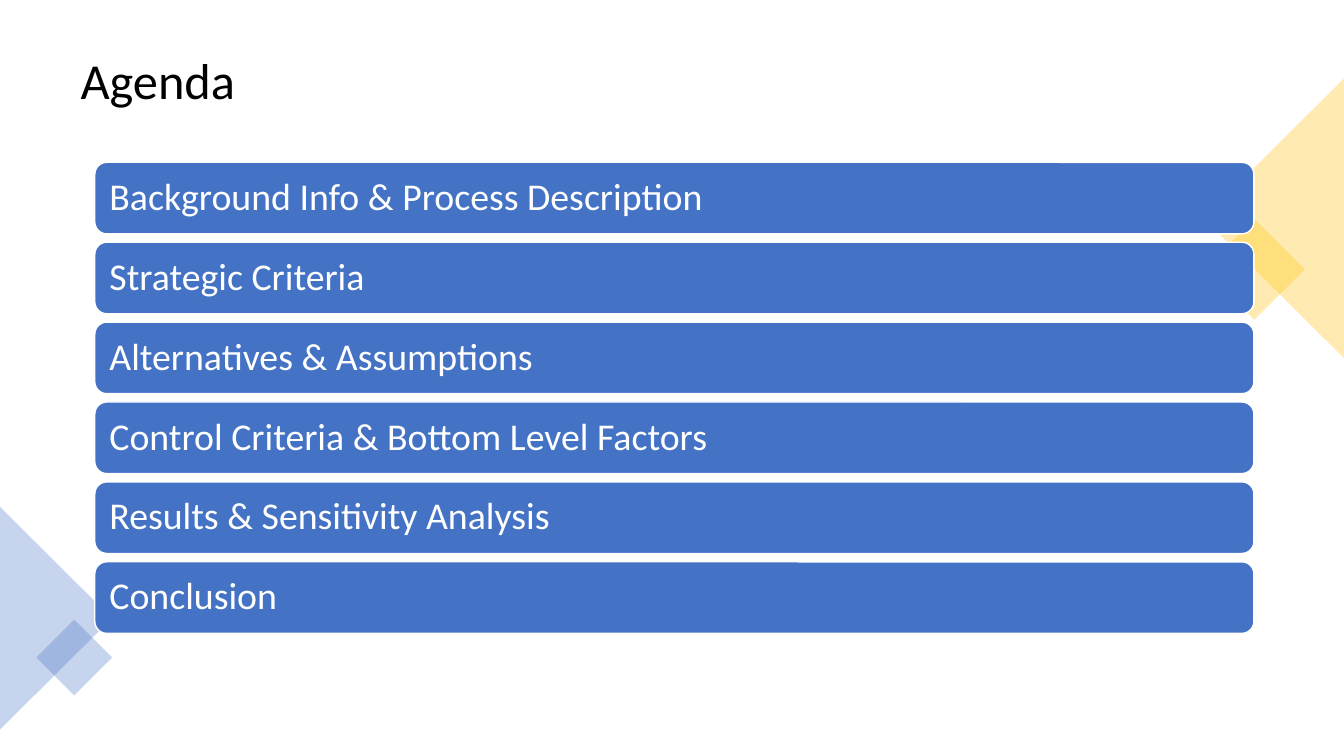
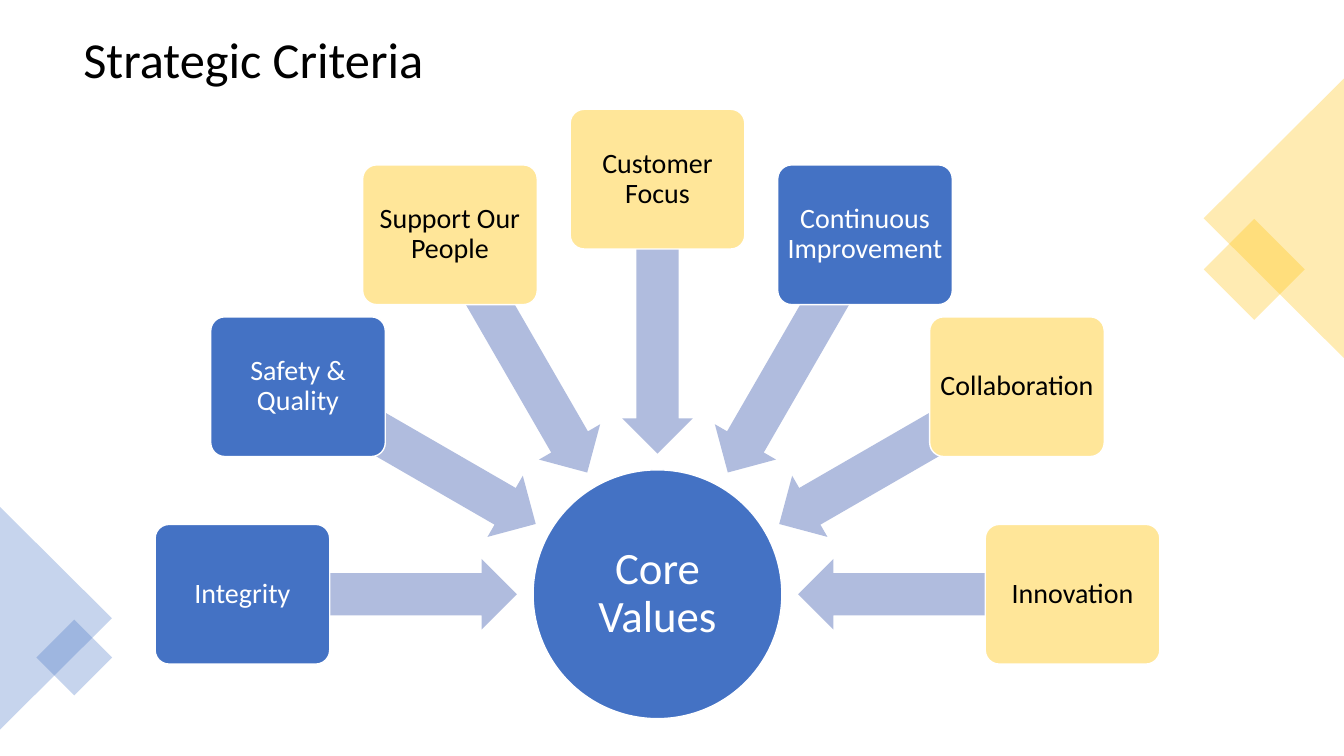
from math import cos, radians, sin

from lxml import etree
from pptx import Presentation
from pptx.dml.color import RGBColor
from pptx.enum.shapes import MSO_SHAPE
from pptx.enum.text import MSO_ANCHOR, PP_ALIGN
from pptx.oxml.ns import qn
from pptx.util import Cm, Pt

RECT = MSO_SHAPE.RECTANGLE
ROUNDED = MSO_SHAPE.ROUNDED_RECTANGLE
TRIANGLE = MSO_SHAPE.ISOSCELES_TRIANGLE
OVAL = MSO_SHAPE.OVAL
ARROW = MSO_SHAPE.LEFT_ARROW
LEFT, CENTER = PP_ALIGN.LEFT, PP_ALIGN.CENTER
MIDDLE = MSO_ANCHOR.MIDDLE

FONT = "Calibri"
COLORS = {
    "blue": "4472C4",
    "gold": "FFC000",
    "cream": "FFE699",
    "lavender": "B0BCDE",
    "white": "FFFFFF",
    "black": "000000",
}
SLIDE_SIZE = (33.87, 19.05)

# Kind, centre x, centre y, width, height, rotation, colour
CORNER_DIAMONDS = [
    (RECT, 31.61, 6.79, 1.8, 1.8, 45, "gold"),
    (TRIANGLE, 32.1, 5.5, 7.04, 3.53, 270, "gold"),
    (TRIANGLE, 1.41, 15.58, 5.61, 2.82, 90, "blue"),
    (RECT, 1.87, 16.57, 1.35, 1.35, 45, "blue"),
]
AGENDA = [
    "Background Info & Process Description",
    "Strategic Criteria",
    "Alternatives & Assumptions",
    "Control Criteria & Bottom Level Factors",
    "Results & Sensitivity Analysis",
    "Conclusion",
]
CORE_VALUES = [
    ("Integrity", "blue"),
    ("Safety & Quality", "blue"),
    ("Support Our People", "cream"),
    ("Customer Focus", "cream"),
    ("Continuous Improvement", "blue"),
    ("Collaboration", "cream"),
    ("Innovation", "cream"),
]


def rgb(name):
    return RGBColor.from_string(COLORS[name])


def write(shape, text, size, color="white", align=CENTER, inset=(0.1, 0.1)):
    """Set the text; inset is the horizontal and vertical margin in cm."""
    frame = shape.text_frame
    frame.word_wrap = True
    frame.vertical_anchor = MIDDLE
    frame.margin_left = frame.margin_right = Cm(inset[0])
    frame.margin_top = frame.margin_bottom = Cm(inset[1])
    paragraph = frame.paragraphs[0]
    paragraph.text = text
    paragraph.alignment = align
    paragraph.line_spacing = 0.9
    paragraph.font.name = FONT
    paragraph.font.size = Pt(size)
    paragraph.font.color.rgb = rgb(color)


def add_centered(slide, kind, cx, cy, width, height, color,
                 rotation=0, outlined=False, opacity=None, adjust=()):
    """Add a filled shape around its centre, in cm."""
    shape = slide.shapes.add_shape(kind, Cm(cx - width / 2), Cm(cy - height / 2),
                                   Cm(width), Cm(height))
    shape.shadow.inherit = False
    shape.rotation = rotation
    for i, value in enumerate(adjust):
        shape.adjustments[i] = value
    shape.fill.solid()
    shape.fill.fore_color.rgb = rgb(color)
    if opacity is not None:
        fill_color = shape._element.spPr.find(qn("a:solidFill")).find(qn("a:srgbClr"))
        etree.SubElement(fill_color, qn("a:alpha"), val=str(opacity * 1000))
    if outlined:
        shape.line.color.rgb = rgb("white")
        shape.line.width = Pt(1)
    else:
        shape.line.fill.background()
    return shape


def new_slide(deck, title, title_box):
    """Add a slide with the shared title style and corner diamonds."""
    slide = deck.slides.add_slide(deck.slide_layouts[6])
    heading = slide.shapes.add_textbox(*map(Cm, title_box))
    write(heading, title, 36, "black", LEFT, inset=(0.25, 0.13))
    for kind, cx, cy, width, height, rotation, color in CORNER_DIAMONDS:
        add_centered(slide, kind, cx, cy, width, height, color, rotation, opacity=30)
    return slide


def add_agenda_bars(slide, box, topics, gap=0.21):
    left, top, width, height = box
    pitch = (height + gap) / len(topics)
    bar_height = pitch - gap
    for i, topic in enumerate(topics):
        bar = add_centered(slide, ROUNDED, left + width / 2,
                           top + i * pitch + bar_height / 2,
                           width, bar_height, "blue", outlined=True)
        write(bar, topic, 27, align=LEFT, inset=(0.28, 0.1))


def add_value_fan(slide, box, hub_text, values):
    """Spread the values on a half circle, each with an arrow to the hub."""
    left, top, width, height = box
    hub_size, card_width, card_height = 6.27, 4.4, 3.52
    cx, cy = left + width / 2, top + height - hub_size / 2
    radius = (width - card_width) / 2
    arrow_radius = 0.67 * radius

    hub = add_centered(slide, OVAL, cx, cy, hub_size, hub_size, "blue", outlined=True)
    write(hub, hub_text, 32, inset=(0.05, 0.05))

    step = 180 / (len(values) - 1)
    for i, (value, color) in enumerate(values):
        angle = 180 + i * step
        dx, dy = cos(radians(angle)), sin(radians(angle))
        add_centered(slide, ARROW, cx + arrow_radius * dx, cy + arrow_radius * dy,
                     6.93, 1.78, "lavender", angle % 360, adjust=(0.6, 0.5))
        card = add_centered(slide, ROUNDED, cx + radius * dx, cy + radius * dy,
                            card_width, card_height, color,
                            outlined=True, adjust=(0.1,))
        write(card, value, 20, "white" if color == "blue" else "black")


def main():
    deck = Presentation()
    deck.slide_width, deck.slide_height = map(Cm, SLIDE_SIZE)

    agenda = new_slide(deck, "Agenda", (1.78, 0.89, 30.3, 2.41))
    add_agenda_bars(agenda, (2.39, 4.09, 29.21, 11.87), AGENDA)

    criteria = new_slide(deck, "Strategic Criteria", (1.85, 0.74, 30.3, 1.63))
    add_value_fan(criteria, (3.91, 2.76, 25.32, 15.35), "Core Values", CORE_VALUES)

    deck.save("out.pptx")


if __name__ == "__main__":
    main()
